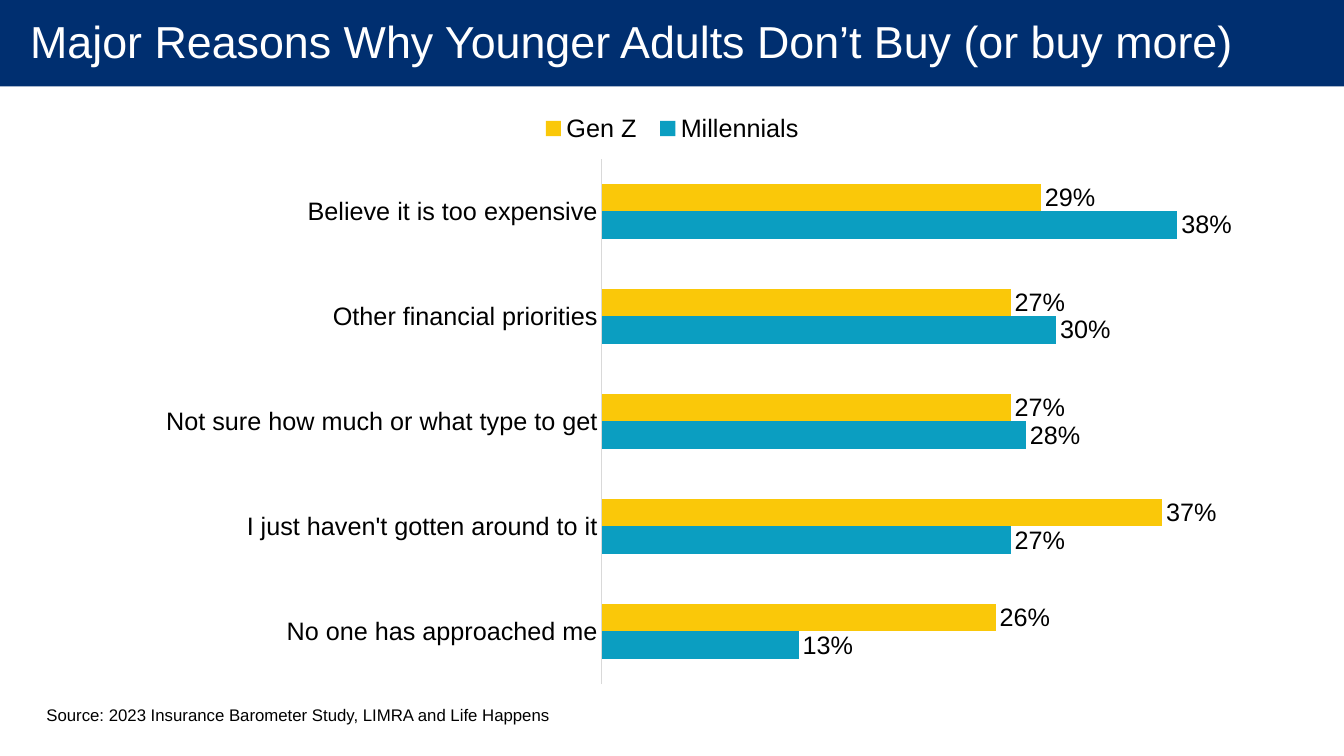
from lxml import etree
from pptx import Presentation
from pptx.chart.data import CategoryChartData
from pptx.dml.color import RGBColor
from pptx.enum.chart import (
    XL_CHART_TYPE as ChartType,
    XL_LABEL_POSITION as LabelPosition,
    XL_LEGEND_POSITION as LegendPosition,
    XL_TICK_MARK as TickMark,
)
from pptx.enum.shapes import MSO_SHAPE as Shape
from pptx.enum.text import MSO_ANCHOR as Anchor
from pptx.oxml.ns import qn
from pptx.util import Cm, Pt

TITLE = "Major Reasons Why Younger Adults Don’t Buy (or buy more)"
SOURCE = "Source: 2023 Insurance Barometer Study, LIMRA and Life Happens"
# Bar charts stack upwards, so the bottom row comes first.
REASONS = [
    # reason, Millennials, Gen Z
    ("No one has approached me", 0.13, 0.26),
    ("I just haven't gotten around to it", 0.27, 0.37),
    ("Not sure how much or what type to get", 0.28, 0.27),
    ("Other financial priorities", 0.30, 0.27),
    ("Believe it is too expensive", 0.38, 0.29),
]
SERIES_NAMES = ["Millennials", "Gen Z "]
COLORS = {
    "Millennials": "0B9EC1",
    "Gen Z ": "FAC809",
    "band": "002F70",
    "title": "FFFFFF",
    "text": "000000",
    "axis": "D9D9D9",
}
FONT = "Arial"
SLIDE_WIDTH, SLIDE_HEIGHT = Cm(33.87), Cm(19.05)
PLOT_AREA = {"x": 0.437, "y": 0.095, "w": 0.541, "h": 0.879}


def rgb(name):
    return RGBColor.from_string(COLORS[name])


def style_font(font, size, color="text"):
    font.name = FONT
    font.size = Pt(size)
    font.bold = False
    font.color.rgb = rgb(color)


def add_text(slide, text, place, size, color="text"):
    box = slide.shapes.add_textbox(*place)
    frame = box.text_frame
    frame.text = text
    frame.word_wrap = True
    style_font(frame.paragraphs[0].runs[0].font, size, color)
    return frame


def add_title(slide):
    band = slide.shapes.add_shape(Shape.RECTANGLE, 0, 0, SLIDE_WIDTH, Cm(2.18))
    band.shadow.inherit = False
    band.fill.solid()
    band.fill.fore_color.rgb = rgb("band")
    band.line.fill.background()
    frame = add_text(slide, TITLE, (0, Cm(-0.2), SLIDE_WIDTH, Cm(2.46)), 32, "title")
    frame.vertical_anchor = Anchor.MIDDLE
    frame.margin_left, frame.margin_right = Cm(0.76), Cm(0.5)
    frame.margin_top = frame.margin_bottom = 0


def fix_plot_area(chart):
    """Pin the inner plot area to fractions of the chart frame."""
    plot_area = chart._chartSpace.chart.plotArea
    for old in plot_area.findall(qn("c:layout")):
        plot_area.remove(old)
    layout = etree.Element(qn("c:layout"))
    manual = etree.SubElement(layout, qn("c:manualLayout"))
    settings = {"layoutTarget": "inner", "xMode": "edge", "yMode": "edge", **PLOT_AREA}
    for tag, value in settings.items():
        etree.SubElement(manual, qn(f"c:{tag}")).set("val", str(value))
    plot_area.insert(0, layout)


def add_reasons_chart(slide):
    reasons, *columns = zip(*REASONS)
    data = CategoryChartData(number_format="0%")
    data.categories = reasons
    for name, values in zip(SERIES_NAMES, columns):
        data.add_series(name, values)
    place = Cm(2.82), Cm(2.57), Cm(28.24), Cm(15.06)
    chart = slide.shapes.add_chart(ChartType.BAR_CLUSTERED, *place, data).chart
    style_font(chart.font, 16)
    chart.has_title = False
    fix_plot_area(chart)

    chart.has_legend = True
    chart.legend.position = LegendPosition.TOP
    chart.legend.include_in_layout = False
    style_font(chart.legend.font, 18)

    reason_axis = chart.category_axis
    reason_axis.major_tick_mark = reason_axis.minor_tick_mark = TickMark.NONE
    reason_axis.format.line.color.rgb = rgb("axis")
    reason_axis.format.line.width = Pt(0.75)
    style_font(reason_axis.tick_labels.font, 18)

    share_axis = chart.value_axis
    share_axis.minimum_scale, share_axis.maximum_scale = 0, 0.4
    share_axis.has_major_gridlines = False
    share_axis.visible = False

    plot = chart.plots[0]
    plot.gap_width, plot.overlap = 182, 0
    plot.vary_by_categories = False
    for series in plot.series:
        series.format.fill.solid()
        series.format.fill.fore_color.rgb = rgb(series.name)
        labels = series.data_labels
        labels.show_value = True
        labels.position = LabelPosition.OUTSIDE_END
        labels.number_format = "0%"
        labels.number_format_is_linked = False
        style_font(labels.font, 18)


def main():
    deck = Presentation()
    deck.slide_width, deck.slide_height = SLIDE_WIDTH, SLIDE_HEIGHT
    slide = deck.slides.add_slide(deck.slide_layouts[6])
    add_title(slide)
    add_reasons_chart(slide)
    add_text(slide, SOURCE, (Cm(0.92), Cm(17.63), Cm(13.5), Cm(0.77)), 12)
    deck.save("out.pptx")


if __name__ == "__main__":
    main()
